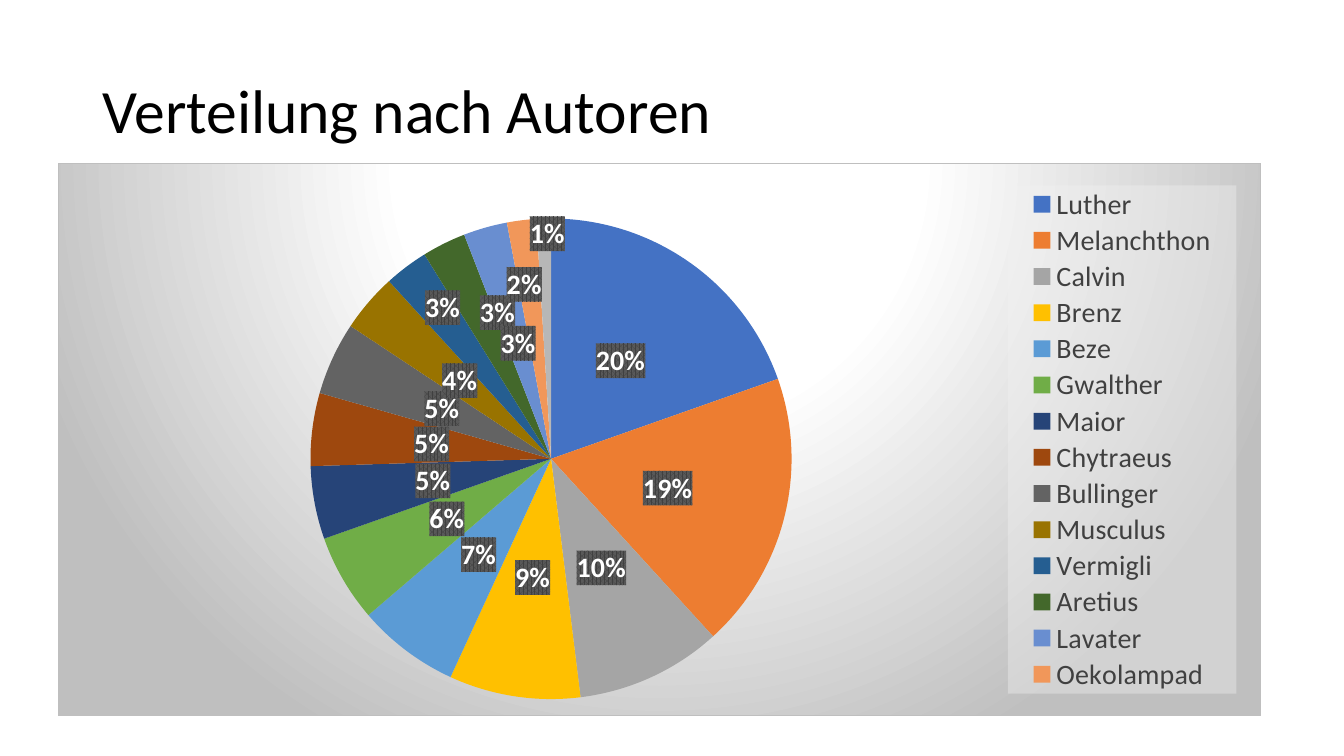
from lxml import etree
from pptx import Presentation
from pptx.chart.data import CategoryChartData
from pptx.dml.color import RGBColor
from pptx.enum.chart import XL_CHART_TYPE, XL_LABEL_POSITION, XL_LEGEND_POSITION
from pptx.enum.text import MSO_ANCHOR, PP_ALIGN
from pptx.oxml import parse_xml
from pptx.oxml.ns import nsdecls, qn
from pptx.util import Cm, Pt

FONT = "Calibri"
AUTHORS = [
    ("Luther", 20, "4472C4"),
    ("Melanchthon", 19, "ED7D31"),
    ("Calvin", 10, "A5A5A5"),
    ("Brenz", 9, "FFC000"),
    ("Beze", 7, "5B9BD5"),
    ("Gwalther", 6, "70AD47"),
    ("Maior", 5, "264478"),
    ("Chytraeus", 5, "9E480E"),
    ("Bullinger", 5, "636363"),
    ("Musculus", 4, "997300"),
    ("Vermigli", 3, "255E91"),
    ("Aretius", 3, "43682B"),
    ("Lavater", 3, "698ED0"),
    ("Oekolampad", 2, "F1975A"),
    ("", 1, "B7B7B7"),
]
LABEL_SHIFTS = {10: (-0.03, -0.1), 11: (0, -0.07), 13: (-0.01, -0.1), 14: (0, -0.19)}

CHART_FILL = """<a:gradFill><a:gsLst>
<a:gs pos="0"><a:srgbClr val="FFFFFF"/></a:gs>
<a:gs pos="39000"><a:srgbClr val="FFFFFF"/></a:gs>
<a:gs pos="100000"><a:srgbClr val="BFBFBF"/></a:gs></a:gsLst>
<a:path path="circle"><a:fillToRect l="50000" t="-80000" r="50000" b="180000"/></a:path>
</a:gradFill><a:ln w="9525"><a:solidFill><a:srgbClr val="BFBFBF"/></a:solidFill></a:ln>"""
LEGEND_FILL = """<a:solidFill><a:srgbClr val="F2F2F2"><a:alpha val="39000"/></a:srgbClr>
</a:solidFill><a:ln><a:noFill/></a:ln>"""
LABEL_FILL = """<a:pattFill prst="pct75"><a:fgClr><a:srgbClr val="404040"/></a:fgClr>
<a:bgClr><a:srgbClr val="595959"/></a:bgClr></a:pattFill><a:ln><a:noFill/></a:ln>"""


def color(value):
    return RGBColor.from_string(value)


def style_font(font, size, value, bold=False):
    font.name = FONT
    font.size = Pt(size)
    font.bold = bold
    font.color.rgb = color(value)


def fill_behind_text(element, fill):
    properties = parse_xml(f"<c:spPr {nsdecls('c', 'a')}>{fill}</c:spPr>")
    element.find(qn("c:txPr")).addprevious(properties)


def manual_layout(inner=False, edges=False, **fractions):
    layout = parse_xml(f"<c:layout {nsdecls('c')}><c:manualLayout/></c:layout>")
    settings = {}
    if inner:
        settings["layoutTarget"] = "inner"
    if edges:
        settings.update(xMode="edge", yMode="edge")
    settings.update(fractions)
    for tag, value in settings.items():
        etree.SubElement(layout[0], qn(f"c:{tag}")).set("val", str(value))
    return layout


def remove_layout(element):
    for layout in element.findall(qn("c:layout")):
        element.remove(layout)


def add_heading(slide, left, top, width, height):
    heading = slide.shapes.title
    heading.left, heading.top, heading.width, heading.height = left, top, width, height
    frame = heading.text_frame
    frame.text = "Verteilung nach Autoren"
    frame.word_wrap = True
    frame.vertical_anchor = MSO_ANCHOR.MIDDLE
    paragraph = frame.paragraphs[0]
    paragraph.alignment = PP_ALIGN.LEFT
    paragraph.line_spacing = 0.9
    style_font(paragraph.runs[0].font, 44, "000000")


def style_labels(labels):
    labels.position = XL_LABEL_POSITION.CENTER
    style_font(labels.font, 20, "FFFFFF", True)


def add_shares(series):
    labels = series.data_labels
    labels.show_percentage = True
    labels.show_value = False
    style_labels(labels)
    fill_behind_text(labels._element, LABEL_FILL)
    for index, (_, _, shade) in enumerate(AUTHORS):
        slice_fill = series.points[index].format.fill
        slice_fill.solid()
        slice_fill.fore_color.rgb = color(shade)
    for index, (x, y) in LABEL_SHIFTS.items():
        style_labels(series.points[index].data_label)
        share = labels._element.findall(qn("c:dLbl"))[-1]
        share.find(qn("c:idx")).addnext(manual_layout(x=x, y=y))
        fill_behind_text(share, LABEL_FILL)
        share.find(qn("c:showVal")).set("val", "0")
        share.find(qn("c:showPercent")).set("val", "1")


def add_legend(chart):
    chart.has_legend = True
    legend = chart.legend
    legend.position = XL_LEGEND_POSITION.RIGHT
    legend.include_in_layout = False
    style_font(legend.font, 20, "404040")
    fill_behind_text(legend._element, LEGEND_FILL)
    unnamed_entry = parse_xml(
        f'<c:legendEntry {nsdecls("c")}><c:idx val="{len(AUTHORS) - 1}"/>'
        '<c:delete val="1"/></c:legendEntry>'
    )
    remove_layout(legend._element)
    overlay = legend._element.find(qn("c:overlay"))
    overlay.addprevious(unnamed_entry)
    overlay.addprevious(manual_layout(edges=True, x=0.79, y=0.04, w=0.19, h=0.92))


def add_author_pie(slide, left, top, width, height):
    data = CategoryChartData()
    data.categories = [name for name, _, _ in AUTHORS]
    data.add_series("Series 1", [share for _, share, _ in AUTHORS])
    chart = slide.shapes.add_chart(XL_CHART_TYPE.PIE, left, top, width, height, data).chart
    chart.has_title = False
    style_font(chart.font, 10, "000000")
    fill_behind_text(chart._chartSpace, CHART_FILL)
    plot = chart.plots[0]
    plot.vary_by_categories = True
    add_shares(plot.series[0])
    add_legend(chart)
    area = chart._chartSpace.chart.plotArea
    remove_layout(area)
    area.insert(0, manual_layout(inner=True, edges=True, x=0.21, y=0.1, w=0.4, h=0.87))


def main():
    deck = Presentation()
    deck.slide_width, deck.slide_height = Cm(33.87), Cm(19.05)
    slide = deck.slides.add_slide(deck.slide_layouts[5])
    add_heading(slide, Cm(2.33), Cm(1.01), Cm(29.21), Cm(3.68))
    add_author_pie(slide, Cm(1.45), Cm(4.1), Cm(30.33), Cm(13.95))
    deck.save("out.pptx")


if __name__ == "__main__":
    main()
